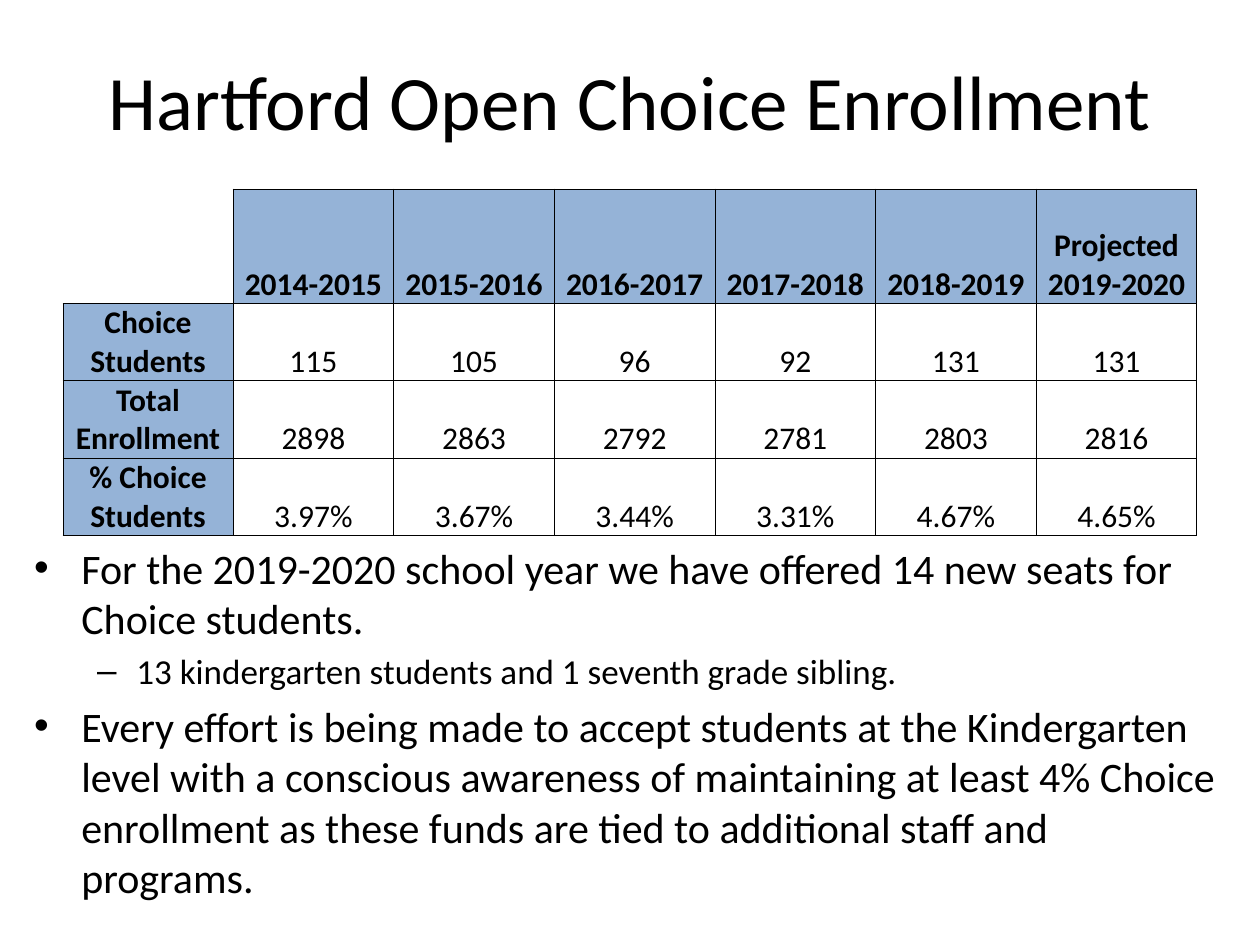
from dataclasses import dataclass

from lxml import etree
from pptx import Presentation, util as u
from pptx.dml.color import RGBColor
from pptx.enum import text
from pptx.oxml import ns


@dataclass(frozen=True)
class Theme:
    font: str = "Calibri"
    ink: str = "000000"
    header: str = "95B3D7"
    title: float = 44
    bullets: tuple = (24, 20)  # one size per list level
    table: float = 18
    border: float = 0.5


THEME = Theme()
WIDTH, HEIGHT = u.Inches(10), u.Inches(7.5)

TITLE = "Hartford Open Choice Enrollment"
ENROLLMENT = [
    ["", "2014-2015", "2015-2016", "2016-2017", "2017-2018", "2018-2019", "Projected 2019-2020"],
    ["Choice Students", "115", "105", "96", "92", "131", "131"],
    ["Total Enrollment", "2898", "2863", "2792", "2781", "2803", "2816"],
    ["% Choice Students", "3.97%", "3.67%", "3.44%", "3.31%", "4.67%", "4.65%"],
]
BULLETS = [
    (0, "For the 2019-2020 school year we have offered 14 new seats for Choice students."),
    (1, "13 kindergarten students and 1 seventh grade sibling."),
    (0, "Every effort is being made to accept students at the Kindergarten level with a "
        "conscious awareness of maintaining at least 4% Choice enrollment as these funds "
        "are tied to additional staff and programs."),
]


def share_box(left, top, width, height):
    """Turn shares of the slide's size into lengths."""
    return (round(WIDTH * left), round(HEIGHT * top),
            round(WIDTH * width), round(HEIGHT * height))


def place(shape, box):
    shape.left, shape.top, shape.width, shape.height = box


def add_run(paragraph, words, size, bold=False):
    run = paragraph.add_run()
    run.text = words
    run.font.name = THEME.font
    run.font.size = u.Pt(size)
    run.font.bold = bold
    run.font.color.rgb = RGBColor.from_string(THEME.ink)


def fill_title(shape, box):
    place(shape, box)
    shape.text_frame.vertical_anchor = text.MSO_ANCHOR.MIDDLE
    paragraph = shape.text_frame.paragraphs[0]
    paragraph.alignment = text.PP_ALIGN.CENTER
    add_run(paragraph, TITLE, THEME.title)


def fill_bullets(shape, box):
    place(shape, box)
    frame = shape.text_frame
    frame.auto_size = text.MSO_AUTO_SIZE.NONE
    for index, (level, words) in enumerate(BULLETS):
        paragraph = frame.add_paragraph() if index else frame.paragraphs[0]
        paragraph.level = level
        add_run(paragraph, words, THEME.bullets[level])


def set_borders(cell, hidden=""):
    """Draw the four edges of a cell, leaving out the hidden ones."""
    properties = cell._tc.get_or_add_tcPr()
    for position, side in enumerate("LRTB"):
        line = etree.Element(ns.qn(f"a:ln{side}"), w=str(u.Pt(THEME.border)))
        if side in hidden:
            etree.SubElement(line, ns.qn("a:noFill"))
        else:
            fill = etree.SubElement(line, ns.qn("a:solidFill"))
            etree.SubElement(fill, ns.qn("a:srgbClr"), val=THEME.ink)
        properties.insert(position, line)


def format_cell(cell, words, header):
    cell.margin_left = cell.margin_right = cell.margin_top = cell.margin_bottom = 0
    cell.vertical_anchor = text.MSO_ANCHOR.BOTTOM
    if header and words:
        cell.fill.solid()
        cell.fill.fore_color.rgb = RGBColor.from_string(THEME.header)
    else:
        cell.fill.background()
    set_borders(cell, hidden="" if words else "LT")
    if words:
        paragraph = cell.text_frame.paragraphs[0]
        paragraph.alignment = text.PP_ALIGN.CENTER
        add_run(paragraph, words, THEME.table, bold=header)


def add_enrollment_table(slide, box):
    row_count, column_count = len(ENROLLMENT), len(ENROLLMENT[0])
    table = slide.shapes.add_table(row_count, column_count, *box).table
    table.first_row = table.horz_banding = False
    width, height = box[2:]
    label_width, header_height = round(width * 0.15), round(height * 0.33)
    for index, column in enumerate(table.columns):
        column.width = (width - label_width) // (column_count - 1) if index else label_width
    for index, row in enumerate(table.rows):
        row.height = (height - header_height) // (row_count - 1) if index else header_height
    for row, values in enumerate(ENROLLMENT):
        for column, words in enumerate(values):
            format_cell(table.cell(row, column), words, header=row == 0 or column == 0)


def build_enrollment_slide(presentation):
    slide = presentation.slides.add_slide(presentation.slide_layouts[1])
    title, body = slide.placeholders
    fill_title(title, share_box(0.05, 0.02, 0.9, 0.17))
    fill_bullets(body, share_box(0.017, 0.567, 0.958, 0.367))
    add_enrollment_table(slide, share_box(0.05, 0.2, 0.9, 0.367))


def main():
    presentation = Presentation()
    presentation.slide_width, presentation.slide_height = WIDTH, HEIGHT
    build_enrollment_slide(presentation)
    presentation.save("out.pptx")


if __name__ == "__main__":
    main()
